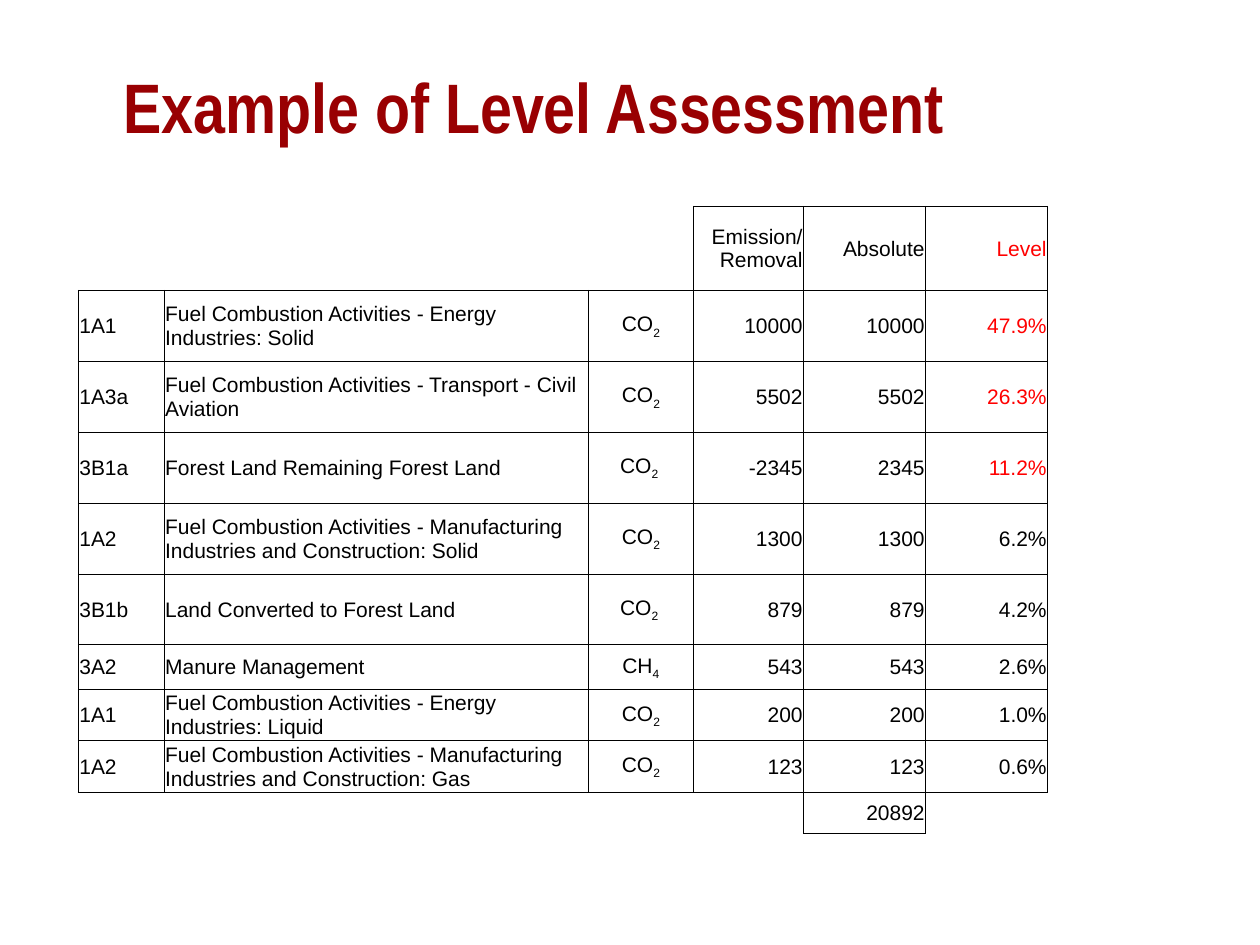
from lxml import etree
from pptx import Presentation
from pptx import util as u
from pptx.dml.color import RGBColor
from pptx.enum import text
from pptx.oxml.ns import qn

COLOURS = {"title": "990002", "text": "000000", "key": "FF0000", "border": "000000"}
COLUMN_WIDTHS = [1.73, 8.55, 2.12, 2.22, 2.46, 2.46]
ROW_HEIGHTS = [1.69] + [1.43] * 5 + [0.89, 1.04, 1.04, 0.83]
KEY_LEVEL = 0.1
GAS_COLUMN, LEVEL_COLUMN = 2, 5
LEFT, CENTER, RIGHT = text.PP_ALIGN.LEFT, text.PP_ALIGN.CENTER, text.PP_ALIGN.RIGHT
ALIGNMENTS = [LEFT, LEFT, CENTER, RIGHT, RIGHT, RIGHT]

CATEGORIES = [
    ("1A1", "Fuel Combustion Activities - Energy Industries: Solid", "CO2", 10000),
    ("1A3a", "Fuel Combustion Activities - Transport - Civil Aviation", "CO2", 5502),
    ("3B1a", "Forest Land Remaining Forest Land", "CO2 ", -2345),
    ("1A2", "Fuel Combustion Activities - Manufacturing Industries and Construction: Solid",
     "CO2", 1300),
    ("3B1b", "Land Converted to Forest Land", "CO2 ", 879),
    ("3A2", "Manure Management", "CH4", 543),
    ("1A1", "Fuel Combustion Activities - Energy Industries: Liquid", "CO2", 200),
    ("1A2", "Fuel Combustion Activities - Manufacturing Industries and Construction: Gas",
     "CO2", 123),
]


def assessment_rows():
    """Return the table wording and the rows whose level is highlighted."""
    total = sum(abs(emission) for *_, emission in CATEGORIES)
    rows = [["", "", "", "Emission/ Removal", "Absolute", "Level"]]
    key_rows = {0}
    for code, category, gas, emission in CATEGORIES:
        level = abs(emission) / total
        if level > KEY_LEVEL:
            key_rows.add(len(rows))
        rows.append([code, category, gas, str(emission), str(abs(emission)), f"{level:.1%}"])
    rows.append(["", "", "", "", str(total), ""])
    return rows, key_rows


class SlideWriter:
    def __init__(self, slide):
        self.slide = slide

    def style(self, paragraph, font_name, size, colour, bold=False):
        font = paragraph.font
        font.name, font.size, font.bold = font_name, u.Pt(size), bold
        font.color.rgb = RGBColor.from_string(COLOURS[colour])

    def title(self, wording, left, top, width, height):
        box = self.slide.shapes.add_textbox(u.Cm(left), u.Cm(top), u.Cm(width), u.Cm(height))
        frame = box.text_frame
        frame.word_wrap = True
        frame.vertical_anchor = text.MSO_ANCHOR.MIDDLE
        frame.text = wording
        self.style(frame.paragraphs[0], "Arial Narrow", 40, "title", bold=True)

    def borders(self, cell, sides):
        """Line the sides marked true and clear the others."""
        properties = cell._tc.get_or_add_tcPr()
        for tag, lined in sides.items():
            line = etree.SubElement(properties, qn(f"a:{tag}"), w=str(u.Pt(0.5)))
            if lined:
                fill = etree.SubElement(line, qn("a:solidFill"))
                etree.SubElement(fill, qn("a:srgbClr"), val=COLOURS["border"])
            else:
                etree.SubElement(line, qn("a:noFill"))

    def cell(self, cell, wording, alignment, colour, subscript_from=None):
        cell.fill.background()
        cell.vertical_anchor = text.MSO_ANCHOR.MIDDLE
        cell.margin_left = cell.margin_right = cell.margin_top = u.Cm(0.02)
        cell.margin_bottom = 0
        paragraph = cell.text_frame.paragraphs[0]
        paragraph.alignment = alignment
        self.style(paragraph, "Arial", 12, colour)
        if not wording:
            return
        paragraph.add_run().text = wording[:subscript_from]
        if subscript_from:
            subscript = paragraph.add_run()
            subscript.text = wording[subscript_from:]
            subscript._r.get_or_add_rPr().set("baseline", "-25000")

    def table(self, rows, key_rows, left, top):
        table = self.slide.shapes.add_table(
            len(rows), len(COLUMN_WIDTHS), u.Cm(left), u.Cm(top),
            u.Cm(sum(COLUMN_WIDTHS)), u.Cm(sum(ROW_HEIGHTS))).table
        table.first_row = table.horz_banding = False
        for column, width in zip(table.columns, COLUMN_WIDTHS):
            column.width = u.Cm(width)
        for row, height in zip(table.rows, ROW_HEIGHTS):
            row.height = u.Cm(height)

        filled = {(r, c) for r, row in enumerate(rows) for c, value in enumerate(row) if value}
        for r, row in enumerate(rows):
            for c, wording in enumerate(row):
                neighbours = {"lnL": (r, c - 1), "lnR": (r, c + 1),
                              "lnT": (r - 1, c), "lnB": (r + 1, c)}
                cell = table.cell(r, c)
                self.borders(cell, {side: bool(filled & {(r, c), neighbour})
                                    for side, neighbour in neighbours.items()})
                is_key = c == LEVEL_COLUMN and r in key_rows
                self.cell(cell, wording, ALIGNMENTS[c], "key" if is_key else "text",
                          subscript_from=2 if c == GAS_COLUMN else None)


def main():
    presentation = Presentation()
    presentation.slide_width, presentation.slide_height = u.Cm(25.4), u.Cm(19.05)
    writer = SlideWriter(presentation.slides.add_slide(presentation.slide_layouts[6]))
    writer.title("Example of Level Assessment", 2.24, 0.74, 22, 2.79)
    writer.table(*assessment_rows(), left=1.58, top=4.16)
    presentation.save("out.pptx")


if __name__ == "__main__":
    main()
